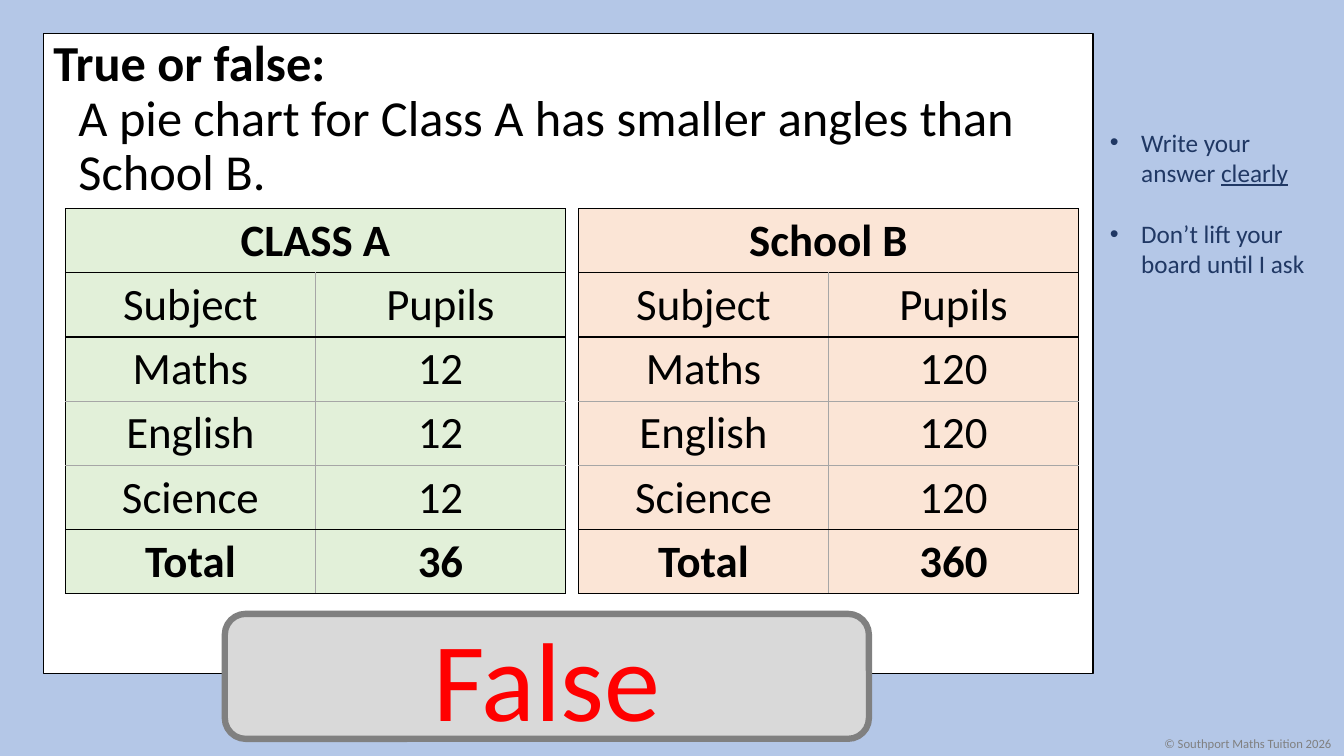
from dataclasses import dataclass

from lxml import etree
from pptx import Presentation
from pptx.dml.color import RGBColor
from pptx.enum.shapes import MSO_SHAPE
from pptx.enum.text import MSO_ANCHOR, MSO_AUTO_SIZE, PP_ALIGN
from pptx.oxml.ns import qn
from pptx.util import Inches, Pt

RECTANGLE = MSO_SHAPE.RECTANGLE
ROUNDED = MSO_SHAPE.ROUNDED_RECTANGLE
CENTER = PP_ALIGN.CENTER
MIDDLE = MSO_ANCHOR.MIDDLE
GROW = MSO_AUTO_SIZE.SHAPE_TO_FIT_TEXT

WIDTH, HEIGHT = Inches(13.33), Inches(7.5)
COLUMNS, ROWS = 40, 30


@dataclass(frozen=True)
class Theme:
    font: str = "Calibri"
    background: str = "B4C7E7"
    panel: str = "FFFFFF"
    ink: str = "000000"
    reminder: str = "203864"
    muted: str = "808080"
    grid: str = "A6A6A6"
    green: str = "E2F0D9"
    peach: str = "FBE5D6"
    button: str = "D9D9D9"
    answer: str = "FF0000"
    footer_size: int = 9
    reminder_size: int = 18
    table_size: int = 32
    question_size: int = 36
    answer_size: int = 80


class SlideBuilder:
    def __init__(self, presentation, theme):
        self.theme = theme
        self.slide = presentation.slides.add_slide(presentation.slide_layouts[6])
        background = self.slide.background.fill
        background.solid()
        background.fore_color.rgb = RGBColor.from_string(theme.background)

    def box(self, column, row, columns, rows):
        return (int(column * WIDTH / COLUMNS), int(row * HEIGHT / ROWS),
                int(columns * WIDTH / COLUMNS), int(rows * HEIGHT / ROWS))

    def style(self, paragraph, size, color, bold=None):
        font = paragraph.font
        font.name = self.theme.font
        font.size = Pt(size)
        font.color.rgb = RGBColor.from_string(color)
        font.bold = bold

    def indent(self, paragraph, inches, bullet=None):
        properties = paragraph._p.get_or_add_pPr()
        properties.set("marL", str(Inches(inches)))
        properties.set("indent", str(-Inches(inches)))
        if bullet:
            etree.SubElement(properties, qn("a:buFont"), typeface="Arial")
            etree.SubElement(properties, qn("a:buChar"), char=bullet)

    def shape(self, kind, place, fill, line, line_width):
        shape = self.slide.shapes.add_shape(kind, *self.box(*place))
        shape.shadow.inherit = False
        shape.fill.solid()
        shape.fill.fore_color.rgb = RGBColor.from_string(fill)
        shape.line.color.rgb = RGBColor.from_string(line)
        shape.line.width = Pt(line_width)
        return shape

    def text_frame(self, place, wrap=True):
        frame = self.slide.shapes.add_textbox(*self.box(*place)).text_frame
        frame.word_wrap = wrap
        return frame

    def question(self, place, heading, statement):
        paragraph = self.text_frame(place).paragraphs[0]
        self.indent(paragraph, 0.25)
        paragraph.line_spacing = 0.9
        heading_run = paragraph.add_run()
        heading_run.text = heading
        heading_run.font.bold = True
        paragraph.add_line_break()
        paragraph.add_run().text = statement
        self.style(paragraph, self.theme.question_size, self.theme.ink)

    def reminders(self, place, items, gap):
        frame = self.text_frame(place)
        frame.auto_size = GROW
        for index, (plain, underlined) in enumerate(items):
            paragraph = frame.add_paragraph() if index else frame.paragraphs[0]
            if index:
                paragraph.space_before = Pt(gap)
            self.indent(paragraph, 0.31, "•")
            paragraph.add_run().text = plain
            if underlined:
                run = paragraph.add_run()
                run.text = underlined
                run.font.underline = True
            self.style(paragraph, self.theme.reminder_size, self.theme.reminder)

    def footer(self, place, text):
        frame = self.text_frame(place, wrap=False)
        frame.auto_size = GROW
        frame.text = text
        self.style(frame.paragraphs[0], self.theme.footer_size, self.theme.muted)

    def answer(self, place, text):
        theme = self.theme
        frame = self.shape(ROUNDED, place, theme.button, theme.muted, 4.5).text_frame
        frame.vertical_anchor = MIDDLE
        frame.text = text
        paragraph = frame.paragraphs[0]
        paragraph.alignment = CENTER
        self.style(paragraph, theme.answer_size, theme.answer)

    def borders(self, cell, colors):
        properties = cell._tc.get_or_add_tcPr()
        for side, color in zip("LRTB", colors):
            line = etree.SubElement(properties, qn(f"a:ln{side}"), w=str(Pt(1)))
            fill = etree.SubElement(line, qn("a:solidFill"))
            etree.SubElement(fill, qn("a:srgbClr"), val=color)

    def pupil_table(self, place, title, counts, fill):
        theme = self.theme
        rows = [(title, ""), ("Subject", "Pupils"), *counts.items(),
                ("Total", sum(counts.values()))]
        last = len(rows) - 1
        table = self.slide.shapes.add_table(len(rows), 2, *self.box(*place)).table
        rules = [theme.grid if 2 < edge < last else theme.ink
                 for edge in range(len(rows) + 1)]
        for row, values in enumerate(rows):
            divider = theme.grid if row else theme.ink
            for column, value in enumerate(values):
                cell = table.cell(row, column)
                sides = (divider, theme.ink) if column else (theme.ink, divider)
                self.borders(cell, (*sides, rules[row], rules[row + 1]))
                cell.fill.solid()
                cell.fill.fore_color.rgb = RGBColor.from_string(fill)
                cell.text = str(value)
                paragraph = cell.text_frame.paragraphs[0]
                paragraph.alignment = CENTER
                self.style(paragraph, theme.table_size, theme.ink, row in (0, last))
        table.cell(0, 0).merge(table.cell(0, 1))


def main():
    presentation = Presentation()
    presentation.slide_width, presentation.slide_height = WIDTH, HEIGHT
    theme = Theme()
    builder = SlideBuilder(presentation, theme)

    panel = (1.29, 1.32, 31.24, 25.4)
    builder.shape(RECTANGLE, panel, theme.panel, theme.ink, 1)
    builder.reminders((32.74, 4.84, 6.96, 6.48),
                      [("Write your answer ", "clearly"),
                       ("Don’t lift your board until I ask", "")], gap=22)
    builder.footer((34.36, 29, 5.64, 1), "© Southport Maths Tuition 2026")
    builder.question(panel, "True or false:",
                     "A pie chart for Class A has smaller angles than School B.")
    builder.answer((6.69, 24.36, 19.17, 4.96), "False")

    subjects = ("Maths", "English", "Science")
    groups = [("CLASS A", 12, theme.green), ("School B", 120, theme.peach)]
    for index, (title, pupils, fill) in enumerate(groups):
        builder.pupil_table((1.95 + index * 15.27, 8.28, 14.88, 15.28),
                            title, dict.fromkeys(subjects, pupils), fill)

    presentation.save("out.pptx")


if __name__ == "__main__":
    main()
